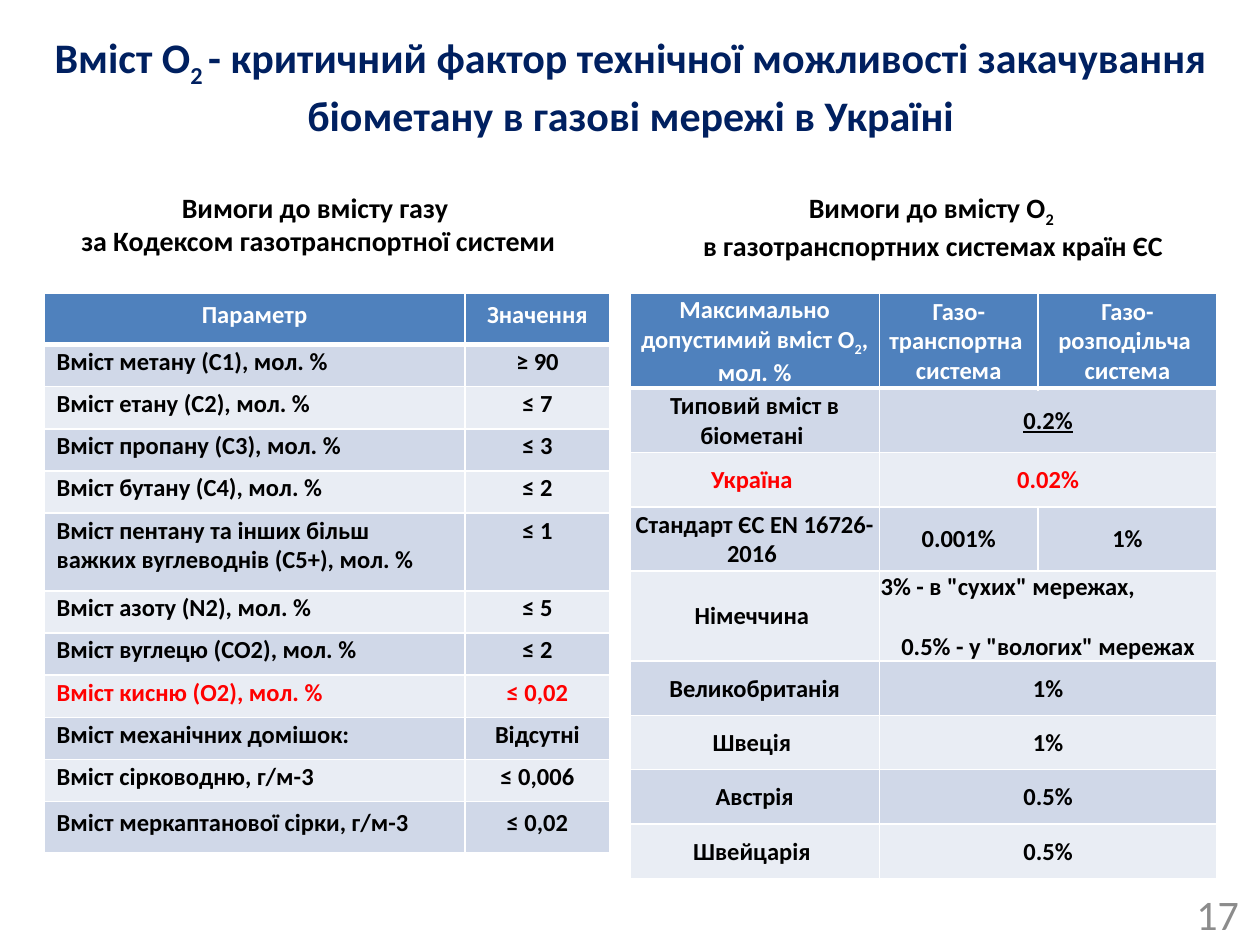
from copy import deepcopy
from dataclasses import dataclass

from lxml.etree import SubElement
from pptx import Presentation
from pptx.dml.color import RGBColor as Rgb
from pptx.enum.text import MSO_ANCHOR as Anchor, MSO_AUTO_SIZE as AutoSize, PP_ALIGN as Align
from pptx.oxml.ns import qn
from pptx.util import Pt


@dataclass(frozen=True)
class Theme:
    font: str = "Calibri"
    navy: str = "002060"
    black: str = "000000"
    white: str = "FFFFFF"
    gray: str = "8C8C8C"
    red: str = "FF0000"
    header: str = "4F81BD"
    bands: tuple = ("D0D8E8", "E9EDF4")
    title_size: int = 24
    heading_size: int = 16
    table_size: int = 14
    grid_width: int = 1
    header_rule: int = 3


GAS_CODE = [
    ("Параметр", "Значення"),
    ("Вміст метану (C1), мол. %", "≥ 90"),
    ("Вміст етану (C2), мол. %", "≤ 7"),
    ("Вміст пропану (C3), мол. %", "≤ 3"),
    ("Вміст бутану (C4), мол. %", "≤ 2"),
    ("Вміст пентану та інших більш важких вуглеводнів (C5+), мол. %", "≤ 1"),
    ("Вміст азоту (N2), мол. %", "≤ 5"),
    ("Вміст вуглецю (CO2), мол. %", "≤ 2"),
    ("Вміст кисню (O2), мол. %", "≤ 0,02"),
    ("Вміст механічних домішок:", "Відсутні"),
    ("Вміст сірководню, г/м-3", "≤ 0,006"),
    ("Вміст меркаптанової сірки, г/м-3", "≤ 0,02"),
]

# A row with two entries has its value across both system columns.
OXYGEN_LIMITS = [
    ("Максимально допустимий вміст О~2~, мол. %",
     "Газо-транспортна |система", "Газо-розподільча |система"),
    ("Типовий вміст в біометані ", "0.2%"),
    ("Україна ", "0.02%"),
    ("Стандарт ЄС EN 16726-2016 ", "0.001%", "1%"),
    ("Німеччина ", '3% - в "сухих" мережах,| 0.5% - у "вологих" мережах '),
    ("Великобританія", "1%"),
    ("Швеція ", "1%"),
    ("Австрія", "0.5%"),
    ("Швейцарія ", "0.5%"),
]


class SlideBuilder:
    def __init__(self, slide, theme):
        self.slide = slide
        self.theme = theme

    def fill_frame(self, frame, text, size, color, bold=True, align=Align.CENTER):
        """Set a frame's text: | parts paragraphs, newline breaks a line, ~ encloses a subscript."""
        for number, content in enumerate(text.split("|")):
            para = frame.add_paragraph() if number else frame.paragraphs[0]
            para.alignment = align
            for index, piece in enumerate(content.split("~")):
                for line, words in enumerate(piece.split("\n")):
                    if line:
                        para.add_line_break()
                    if not words:
                        continue
                    span = para.add_run()
                    span.text = words
                    span.font.name = self.theme.font
                    span.font.size = Pt(size)
                    span.font.bold = bold
                    span.font.color.rgb = Rgb.from_string(color)
                    if index % 2:
                        span.font._element.set("baseline", "-25000")
            for line_break in para._p.findall(qn("a:br")):
                line_break.append(deepcopy(span.font._element))

    def title(self, text, *bounds):
        box = self.slide.shapes.title
        box.left, box.top, box.width, box.height = map(Pt, bounds)
        frame = box.text_frame
        frame.word_wrap = True
        frame.auto_size = AutoSize.NONE
        frame.vertical_anchor = Anchor.MIDDLE
        self.fill_frame(frame, text, self.theme.title_size, self.theme.navy)

    def text(self, text, bounds, size, color, bold=True, align=Align.CENTER, anchor=Anchor.TOP):
        frame = self.slide.shapes.add_textbox(*map(Pt, bounds)).text_frame
        frame.word_wrap = True
        frame.vertical_anchor = anchor
        self.fill_frame(frame, text, size, color, bold, align)

    def border(self, cell, side, width):
        line = SubElement(cell._tc.get_or_add_tcPr(), qn(f"a:ln{side}"), w=str(Pt(width)))
        fill = SubElement(line, qn("a:solidFill"))
        SubElement(fill, qn("a:srgbClr"), val=self.theme.white)

    def table(self, rows, left, top, widths, heights, highlight):
        """Add a banded table; the row numbered highlight is set in red."""
        theme = self.theme
        table = self.slide.shapes.add_table(
            len(rows), len(widths), Pt(left), Pt(top), Pt(sum(widths)), Pt(sum(heights))).table
        for column, width in zip(table.columns, widths):
            column.width = Pt(width)
        for number, (row, height, entries) in enumerate(zip(table.rows, heights, rows)):
            row.height = Pt(height)
            color = theme.white if number == 0 else theme.red if number == highlight else theme.black
            background = theme.bands[(number - 1) % 2] if number else theme.header
            for cell in row.cells:
                for side in "LRTB":
                    under_header = (number, side) in ((0, "B"), (1, "T"))
                    self.border(cell, side, theme.header_rule if under_header else theme.grid_width)
                cell.fill.solid()
                cell.fill.fore_color.rgb = Rgb.from_string(background)
            for cell, entry in zip(row.cells, entries):
                self.fill_frame(cell.text_frame, entry, theme.table_size, color)
            if len(entries) < len(widths):
                table.cell(number, len(entries) - 1).merge(table.cell(number, len(widths) - 1))
        return table

    def gas_code_table(self, left, top):
        heights = [24.1] * len(GAS_CODE)
        heights[0] = heights[-1] = 29.1
        heights[5] = 44.4
        table = self.table(GAS_CODE, left, top, (240.5, 82.8), heights, highlight=8)
        for number, row in enumerate(table.rows):
            edge = number in (0, len(GAS_CODE) - 1)
            for cell in row.cells:
                cell.margin_top = cell.margin_bottom = Pt(3.6 if edge else 1.44)
                para = cell.text_frame.paragraphs[0]
                para.space_before, para.space_after = Pt(6), Pt(1)
            if number:
                row.cells[0].text_frame.paragraphs[0].alignment = Align.LEFT

    def oxygen_table(self, left, top):
        heights = [31.1] * len(OXYGEN_LIMITS)
        heights[0] = 54
        heights[1] = heights[3] = heights[4] = 36.7
        table = self.table(OXYGEN_LIMITS, left, top, (142.5, 90.7, 102.2), heights, highlight=2)
        for cell in table.iter_cells():
            cell.vertical_anchor = Anchor.MIDDLE
            cell.margin_left = cell.margin_right = cell.margin_top = Pt(0.72)
            cell.margin_bottom = 0
        table.cell(1, 1).text_frame.paragraphs[0].runs[0].font.underline = True
        dry_networks = table.cell(4, 1).text_frame.paragraphs[0]
        dry_networks.alignment = Align.LEFT
        dry_networks.space_after = Pt(17)


def main():
    deck = Presentation()
    deck.slide_width, deck.slide_height = Pt(720), Pt(540)
    theme = Theme()
    page = SlideBuilder(deck.slides.add_slide(deck.slide_layouts[5]), theme)

    page.title("Вміст О~2 ~- критичний фактор технічної можливості закачування "
               "біометану в газові мережі в Україні", 20.2, 15.1, 680.4, 67.7)
    page.text("17", (547.2, 507.6, 167.8, 28.8), theme.title_size, theme.gray,
              bold=False, align=Align.RIGHT, anchor=Anchor.MIDDLE)

    table_top, heading_top, heading_height = 167.8, 105.1, 46.1
    page.gas_code_table(25.2, table_top)
    page.oxygen_table(360, table_top)
    page.text("Вимоги до вмісту газу \nза Кодексом газотранспортної системи",
              (20.2, heading_top, 323.3, heading_height), theme.heading_size, theme.black)
    page.text("Вимоги до вмісту О~2 \n~в газотранспортних системах країн ЄС",
              (365.8, heading_top, 334.8, heading_height), theme.heading_size, theme.black)

    deck.save("out.pptx")


if __name__ == "__main__":
    main()
